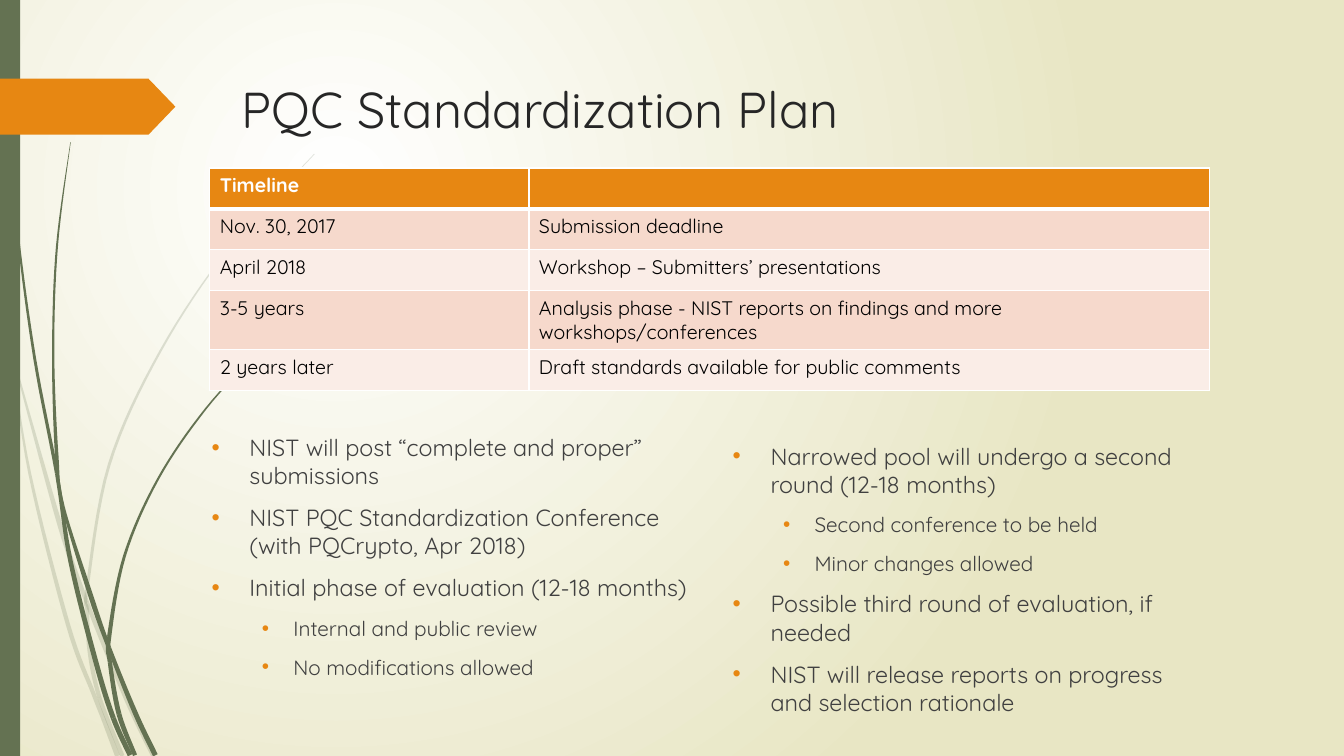
import dataclasses
import typing

import lxml.etree
import pptx
import pptx.dml.color
import pptx.enum.shapes
import pptx.enum.text
import pptx.oxml.ns
import pptx.util

Pt = pptx.util.Pt
qn = pptx.oxml.ns.qn
FONT = "Quicksand"
STEPS = 8
FINE = 100
HUES = {
    "white": "FFFFFF", "sand": "E8E6C4", "moss": "647252", "amber": "E78712",
    "title": "262626", "body": "404040", "black": "000000",
    "rose": "F6D9CC", "blush": "FAEDE7",
}


@dataclasses.dataclass
class Blade:
    alpha: int
    cuts: list[int]
    knots: list[tuple[float, float, float]]


@dataclasses.dataclass
class Panel:
    left: float
    top: float
    width: float
    height: float
    items: list[tuple[int, str]]


BLADES = [
    Blade(20, [1, 4], [
        (0, 209, 2), (8, 250, 1), (10.5, 259, 1), (42.8, 375, 3.5),
        (62, 430, 3), (90, 499, 3), (109.8, 540, 3.6)]),
    Blade(20, [4], [
        (8, 252, 0.5), (21.2, 338, 2), (48.5, 446, 3), (66.6, 495, 3),
        (74, 514, 3), (84, 540, 3.6)]),
    Blade(20, [4, 5, 7], [
        (224.6, 110, 0.5), (164.5, 176, 0.8), (114.5, 251, 1.5), (78, 332, 2),
        (62.3, 420, 2.2), (62.3, 436, 2.6), (64, 465, 3), (71, 498, 3), (87.5, 540, 3)]),
    Blade(100, [4, 7], [
        (2.5, 0, 0.7), (5.4, 79, 0.8), (12.9, 168, 1.4), (24.8, 256, 2),
        (40.5, 338, 2.5), (50.4, 401, 3.2), (68.8, 474, 3.6), (81, 513, 3.6),
        (93, 539.5, 3.6)]),
    Blade(100, [3, 4, 6], [
        (50.4, 101.5, 0.3), (40.7, 176, 1.4), (38, 251, 1.6), (40.5, 325, 2.5),
        (45, 361, 2), (65, 426, 3.5), (78, 463, 3), (96.5, 509, 3.5), (111, 539.5, 3.6)]),
    Blade(100, [4, 5, 6], [
        (187.3, 247.7, 0.4), (147, 292, 1.2), (113, 342, 1.5), (89, 397, 2),
        (78, 455, 3), (78.5, 473, 3), (85, 510, 3.5), (96.5, 539.5, 3)]),
]
ROWS = [
    ("Timeline", ""),
    ("Nov. 30, 2017", "Submission deadline"),
    ("April 2018", "Workshop – Submitters’ presentations"),
    ("3-5 years", "Analysis phase - NIST reports on findings and more workshops/conferences"),
    ("2 years later", "Draft standards available for public comments"),
]
PANELS = [
    Panel(144, 306, 372, 210, [
        (0, "NIST will post “complete and proper” submissions"),
        (0, "NIST PQC Standardization Conference (with PQCrypto, Apr 2018)"),
        (0, "Initial phase of evaluation (12-18 months)"),
        (1, "Internal and public review"),
        (1, "No modifications allowed"),
    ]),
    Panel(516.3, 312, 348, 204, [
        (0, "Narrowed pool will undergo a second round (12-18 months)"),
        (1, "Second conference to be held"),
        (1, "Minor changes allowed"),
        (0, "Possible third round of evaluation, if needed"),
        (0, "NIST will release reports on progress and selection rationale"),
    ]),
]


def hue(name: str) -> pptx.dml.color.RGBColor:
    return pptx.dml.color.RGBColor.from_string(HUES[name])


def add(parent: typing.Any, tag: str, **attrs: str) -> typing.Any:
    return lxml.etree.SubElement(parent, qn(tag), attrs)


def style(para: typing.Any, size: float, color: str, bold: bool = False) -> None:
    for run in para.runs:
        run.font.name = FONT
        run.font.size = Pt(size)
        run.font.bold = bold
        run.font.color.rgb = hue(color)


def paint(shape: typing.Any, color: str, alpha: int = 100) -> None:
    shape.shadow.inherit = False
    shape.fill.solid()
    shape.fill.fore_color.rgb = hue(color)
    shape.line.fill.background()
    if alpha < 100:
        tone = shape.fill._xPr.find(".//" + qn("a:srgbClr"))
        add(tone, "a:alpha", val=str(alpha * 1000))


def set_back(slide: typing.Any) -> None:
    fill = slide.background.fill
    fill.gradient()
    for stop, name in zip(fill.gradient_stops, ("white", "sand")):
        stop.color.rgb = hue(name)
    grad = slide._element.find(".//" + qn("a:gradFill"))
    grad.remove(grad.find(qn("a:lin")))
    way = add(grad, "a:path", path="circle")
    add(way, "a:fillToRect", l="50000", t="50000", r="100000", b="100000")


def smooth(knots: list) -> list[tuple[float, ...]]:
    ends = [knots[0], *knots, knots[-1]]
    curve = []
    for a, b, c, d in zip(ends, ends[1:], ends[2:], ends[3:]):
        for t in (i / STEPS for i in range(STEPS)):
            curve.append(tuple(
                q + t * (r - p) / 2 + t * t * (2 * p - 5 * q + 4 * r - s) / 2
                + t ** 3 * (3 * q - p - 3 * r + s) / 2
                for p, q, r, s in zip(a, b, c, d)))
    return curve + [knots[-1]]


def draw_blade(slide: typing.Any, blade: Blade) -> None:
    curve = smooth(blade.knots)
    near, far = [], []
    for i, (x, y, width) in enumerate(curve):
        prev, following = curve[max(i - 1, 0)], curve[min(i + 1, len(curve) - 1)]
        dx, dy = following[0] - prev[0], following[1] - prev[1]
        half = width / 2 / (dx * dx + dy * dy) ** 0.5
        near.append(((x - dy * half) * FINE, (y + dx * half) * FINE))
        far.append(((x + dy * half) * FINE, (y - dx * half) * FINE))
    marks = [0, *blade.cuts, len(blade.knots) - 1]
    for start, end in zip(marks, marks[1:]):
        part = slice(start * STEPS, end * STEPS + 1)
        edge = near[part] + far[part][::-1]
        form = slide.shapes.build_freeform(*edge[0], scale=Pt(1) / FINE)
        form.add_line_segments(edge[1:], close=True)
        paint(form.convert_to_shape(), "moss", blade.alpha)


def draw_block(slide: typing.Any, kind: typing.Any, box: tuple, color: str) -> typing.Any:
    shape = slide.shapes.add_shape(kind, *map(Pt, box))
    paint(shape, color)
    return shape


def draw_table(slide: typing.Any) -> None:
    frame = slide.shapes.add_table(len(ROWS), 2, Pt(149.8), Pt(120), Pt(714), Pt(146))
    table = frame.table
    for column, width in zip(table.columns, (228, 486)):
        column.width = Pt(width)
    for i, texts in enumerate(ROWS):
        table.rows[i].height = Pt(29.2)
        fill = "amber" if i == 0 else ("blush", "rose")[i % 2]
        for j, text in enumerate(texts):
            cell = table.cell(i, j)
            cell.text_frame.text = text
            style(cell.text_frame.paragraphs[0], 14, "black" if i else "white", i == 0)
            props = cell._tc.get_or_add_tcPr()
            for side in "LRTB":
                thick = 3 if (i, side) in ((0, "B"), (1, "T")) else 1
                line = add(props, "a:ln" + side, w=str(Pt(thick)))
                add(add(line, "a:solidFill"), "a:srgbClr", val=HUES["white"])
            cell.fill.solid()
            cell.fill.fore_color.rgb = hue(fill)


def draw_panel(slide: typing.Any, panel: Panel) -> None:
    box = slide.shapes.add_textbox(
        Pt(panel.left), Pt(panel.top), Pt(panel.width), Pt(panel.height))
    frame = box.text_frame
    frame.word_wrap = True
    frame.text = "\n".join(text for _, text in panel.items)
    for para, (level, _) in zip(frame.paragraphs, panel.items):
        para.level = level
        para.space_before = Pt(10)
        style(para, (16.7, 14.8)[level], "body")
        props = para._p.get_or_add_pPr()
        props.set("marL", str(Pt((27, 58.5)[level])))
        props.set("indent", str(Pt((-27, -22.5)[level])))
        add(add(props, "a:buClr"), "a:srgbClr", val=HUES["amber"])
        add(props, "a:buFont", typeface="Arial")
        add(props, "a:buChar", char="•")


def main() -> None:
    deck = pptx.Presentation()
    deck.slide_width, deck.slide_height = Pt(960), Pt(540)
    slide = deck.slides.add_slide(deck.slide_layouts[5])
    set_back(slide)
    for blade in BLADES:
        draw_blade(slide, blade)
    kinds = pptx.enum.shapes.MSO_SHAPE
    draw_block(slide, kinds.RECTANGLE, (0, 0, 14.4, 540), "moss")
    arrow = draw_block(slide, kinds.PENTAGON, (0, 56.2, 125.3, 40), "amber")
    arrow.adjustments[0] = 0.48
    title = slide.shapes.title
    title.left, title.top, title.width, title.height = map(Pt, (165.6, 52.2, 701.3, 100.8))
    title.text_frame.text = "PQC Standardization Plan"
    title.text_frame.vertical_anchor = pptx.enum.text.MSO_ANCHOR.TOP
    para = title.text_frame.paragraphs[0]
    para.alignment = pptx.enum.text.PP_ALIGN.LEFT
    style(para, 36, "title")
    draw_table(slide)
    for panel in PANELS:
        draw_panel(slide, panel)
    deck.save("out.pptx")


if __name__ == "__main__":
    main()
